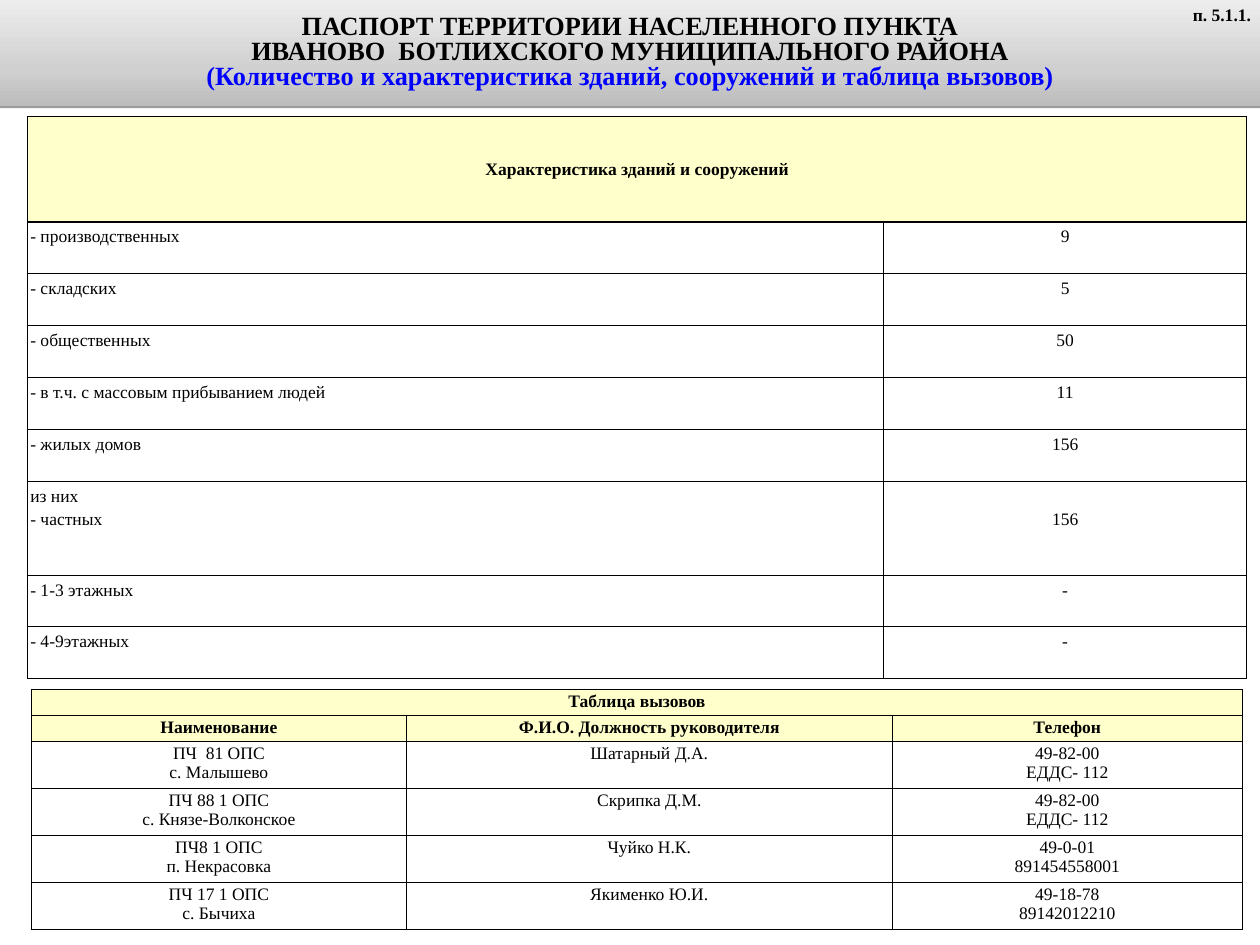
from lxml.etree import SubElement as Sub
from pptx import Presentation
from pptx.dml.color import RGBColor
from pptx.enum.text import MSO_ANCHOR as Anchor, MSO_AUTO_SIZE as Fit, PP_ALIGN as Align
from pptx.oxml.ns import qn
from pptx.util import Pt

FONT = "Times New Roman"
BLACK, BLUE, WHITE, CREAM = "000000", "0000FF", "FFFFFF", "FFFFCC"

HEAD = [
    ("ПАСПОРТ ТЕРРИТОРИИ НАСЕЛЕННОГО ПУНКТА", BLACK),
    ("ИВАНОВО  БОТЛИХСКОГО МУНИЦИПАЛЬНОГО РАЙОНА", BLACK),
    ("(Количество и характеристика зданий, сооружений и таблица вызовов)", BLUE),
]
HOUSES = [
    [["Характеристика зданий и сооружений"], []],
    [["- производственных"], ["9"]],
    [["- складских"], ["5"]],
    [["- общественных"], ["50"]],
    [["- в т.ч. с массовым прибыванием людей"], ["11"]],
    [["- жилых домов"], ["156"]],
    [["из них", "- частных"], ["156"]],
    [["- 1-3 этажных"], ["-"]],
    [["- 4-9этажных"], ["-"]],
]
CALLS = [
    [["Таблица вызовов"], [], []],
    [["Наименование"], ["Ф.И.О. Должность руководителя"], ["Телефон"]],
    [["ПЧ  81 ОПС", "с. Малышево"], ["Шатарный Д.А."], ["49-82-00", "ЕДДС- 112"]],
    [["ПЧ 88 1 ОПС", "с. Князе-Волконское"], ["Скрипка Д.М."], ["49-82-00", "ЕДДС- 112"]],
    [["ПЧ8 1 ОПС", "п. Некрасовка"], ["Чуйко Н.К."], ["49-0-01", "891454558001"]],
    [["ПЧ 17 1 ОПС", "с. Бычиха"], ["Якименко Ю.И."], ["49-18-78", "89142012210"]],
]


def paint(color, tint):
    color.rgb = RGBColor.from_string(tint)


def add_line(frame, n, text, size=14, bold=False, tint=BLACK, align=Align.CENTER):
    """Write paragraph n of a text frame as one run."""
    para = frame.add_paragraph() if n else frame.paragraphs[0]
    para.alignment = align
    run = para.add_run()
    run.text = text
    font = run.font
    font.name, font.size, font.bold = FONT, Pt(size), bold
    paint(font.color, tint)
    return para


def add_tint(parent, tint):
    return Sub(parent, qn("a:srgbClr"), val=tint)


def add_edges(cell):
    props = cell._tc.get_or_add_tcPr()
    for side in ("a:lnL", "a:lnR", "a:lnT", "a:lnB"):
        edge = Sub(props, qn(side), w=str(Pt(1)))
        add_tint(Sub(edge, qn("a:solidFill")), BLACK)


def add_grid(slide, left, top, cols, rows, data, heads, pad, gap=0, first=Align.CENTER):
    """Draw a table; heads counts the cream rows, the first of which is merged."""
    table = slide.shapes.add_table(
        len(rows), len(cols), Pt(left), Pt(top), Pt(sum(cols)), Pt(sum(rows))
    ).table
    table.first_row = table.horz_banding = False
    for col, width in zip(table.columns, cols):
        col.width = Pt(width)
    for row, height in zip(table.rows, rows):
        row.height = Pt(height)
    table.cell(0, 0).merge(table.cell(0, len(cols) - 1))
    for r, line in enumerate(data):
        top_row = r < heads
        for c, texts in enumerate(line):
            cell = table.cell(r, c)
            add_edges(cell)
            cell.fill.solid()
            paint(cell.fill.fore_color, CREAM if top_row else WHITE)
            cell.margin_left = cell.margin_right = Pt(2.25)
            cell.margin_top = cell.margin_bottom = Pt(pad)
            align = Align.CENTER if c or top_row else first
            for n, text in enumerate(texts):
                para = add_line(cell.text_frame, n, text, bold=top_row, align=align)
                para.space_before = Pt(gap)
    return table


def add_fade(shape):
    """Give a shape the grey gradient and the thin shadow below it."""
    props = shape._element.spPr
    fade = Sub(props, qn("a:gradFill"))
    stops = Sub(fade, qn("a:gsLst"))
    for place, tint in ((0, "BCBCBC"), (35, "D0D0D0"), (100, "EDEDED")):
        add_tint(Sub(stops, qn("a:gs"), pos=str(place * 1000)), tint)
    Sub(fade, qn("a:lin"), ang=str(270 * 60000))
    glow = Sub(
        Sub(props, qn("a:effectLst")), qn("a:outerShdw"),
        dist=str(Pt(1.6)), dir=str(90 * 60000), rotWithShape="0",
    )
    Sub(add_tint(glow, BLACK), qn("a:alpha"), val="38000")


def add_head(slide):
    title = slide.shapes.title
    title.left, title.top, title.width, title.height = Pt(0), Pt(0), Pt(1008), Pt(85)
    add_fade(title)
    frame = title.text_frame
    frame.auto_size = Fit.NONE
    frame.vertical_anchor = Anchor.MIDDLE
    for n, (text, tint) in enumerate(HEAD):
        add_line(frame, n, text, 21, True, tint).line_spacing = 0.8


def add_mark(slide):
    frame = slide.shapes.add_textbox(Pt(940.3), Pt(0), Pt(67.7), Pt(24)).text_frame
    frame.word_wrap = True
    add_line(frame, 0, "п. 5.1.1.", bold=True, align=Align.RIGHT)


def main():
    deck = Presentation()
    deck.slide_width, deck.slide_height = Pt(1008), Pt(756)
    slide = deck.slides.add_slide(deck.slide_layouts[5])
    add_head(slide)
    rows = [84.2] + [41.5] * 5 + [75] + [41.5] * 2
    houses = add_grid(
        slide, 22, 93.4, [684.7, 290.9], rows, HOUSES, 1, 4.3, 2.8, Align.LEFT
    )
    houses.cell(0, 0).vertical_anchor = Anchor.MIDDLE
    # The count stands level with the second line of its label.
    houses.cell(6, 1).margin_top = Pt(22.8)
    rows = [20.8] * 2 + [37.6] * 4
    add_grid(slide, 25.2, 551.4, [299.9, 388.8, 280], rows, CALLS, 2, 2.2)
    add_mark(slide)
    deck.save("out.pptx")


if __name__ == "__main__":
    main()
